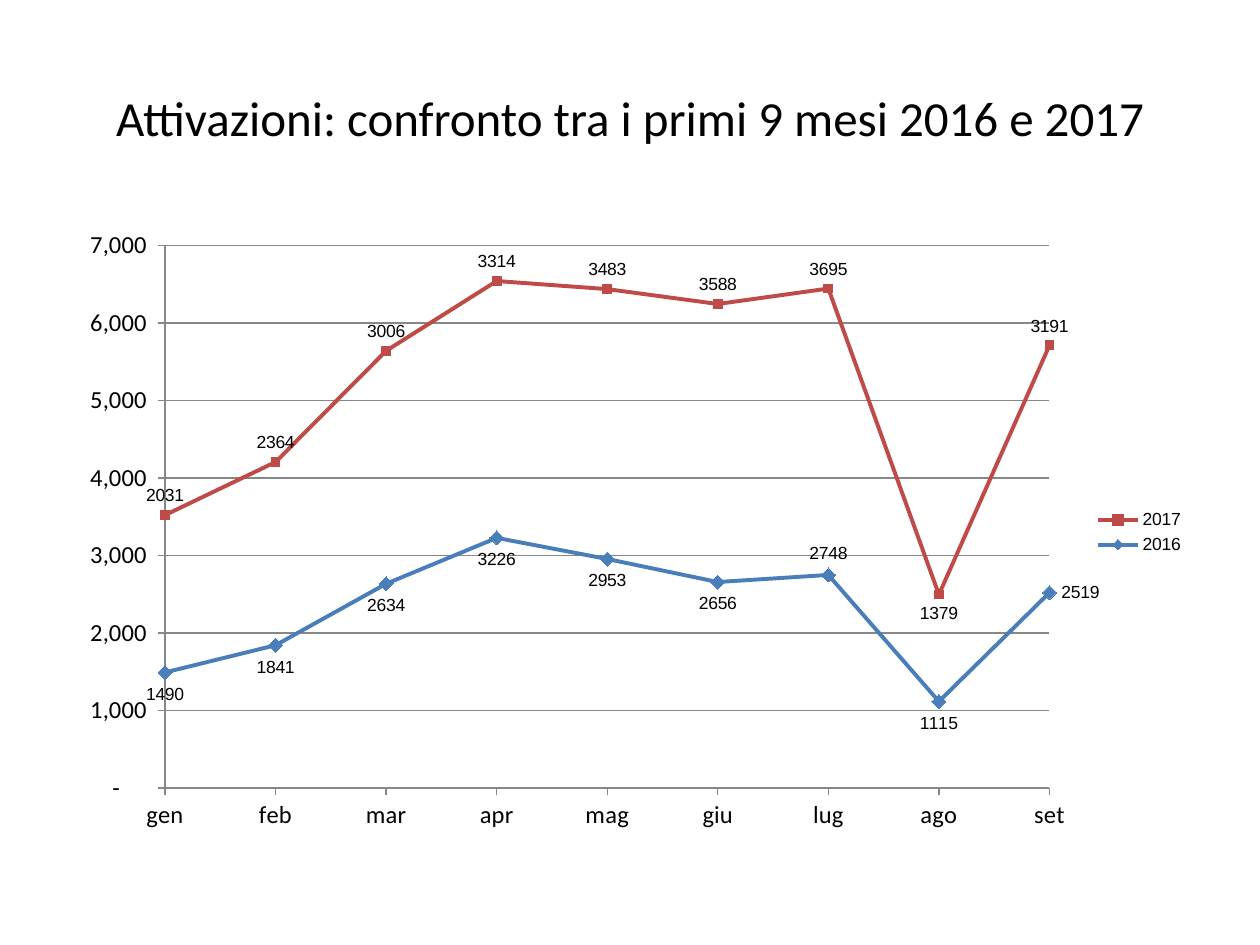
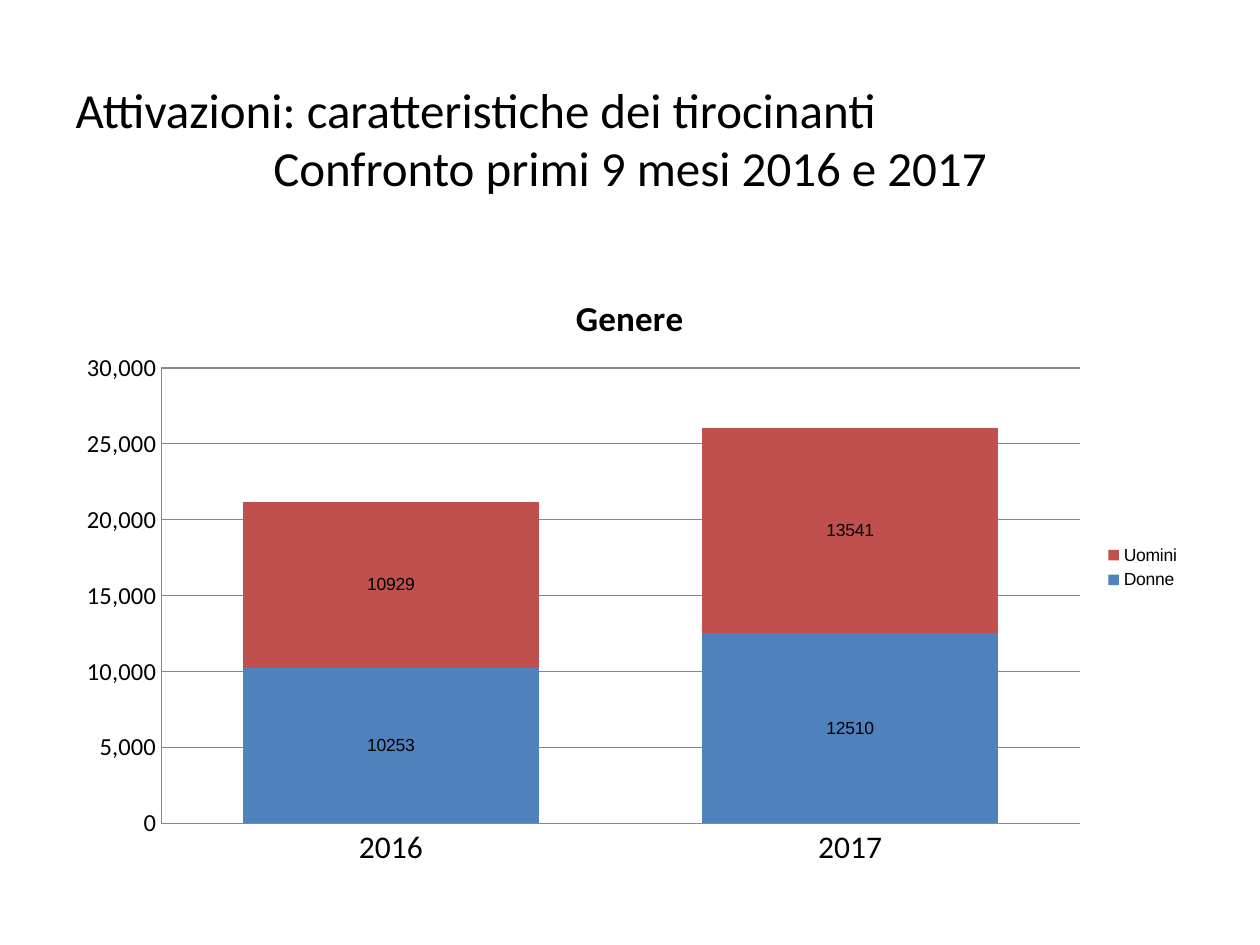
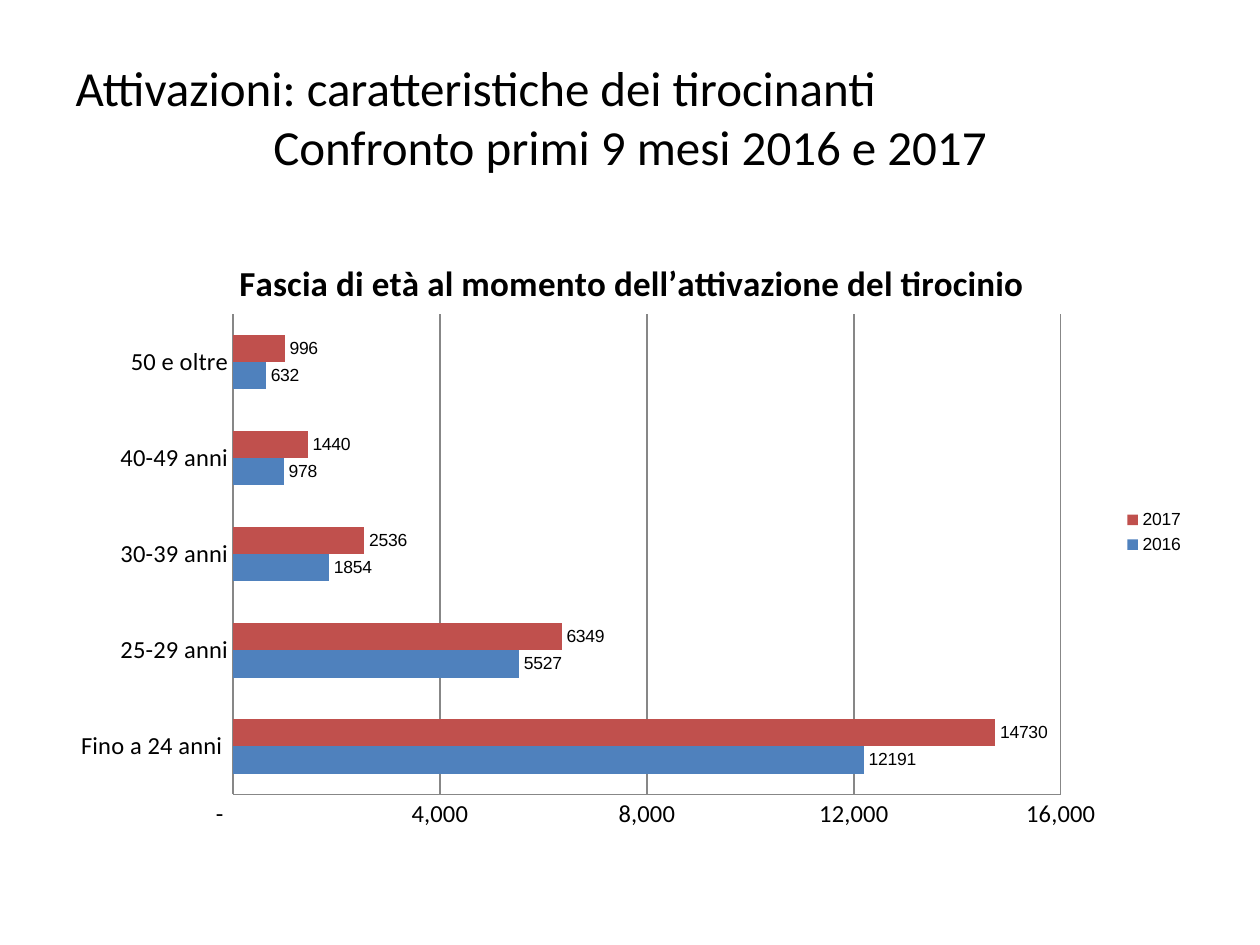
from dataclasses import dataclass

from lxml import etree
from pptx import Presentation
from pptx.chart.data import CategoryChartData
from pptx.dml.color import RGBColor
from pptx.enum.chart import (XL_CHART_TYPE, XL_LABEL_POSITION, XL_LEGEND_POSITION,
                             XL_MARKER_STYLE, XL_TICK_MARK)
from pptx.enum.text import MSO_ANCHOR, MSO_AUTO_SIZE, PP_ALIGN
from pptx.oxml.ns import qn
from pptx.util import Inches, Pt

LINE = XL_CHART_TYPE.LINE_MARKERS_STACKED
STACK = XL_CHART_TYPE.COLUMN_STACKED
BAR = XL_CHART_TYPE.BAR_CLUSTERED
ABOVE, BELOW = XL_LABEL_POSITION.ABOVE, XL_LABEL_POSITION.BELOW
RIGHT, MID = XL_LABEL_POSITION.RIGHT, XL_LABEL_POSITION.CENTER
OUTER = XL_LABEL_POSITION.OUTSIDE_END
SIDE = XL_LEGEND_POSITION.RIGHT
DIAMOND, SQUARE = XL_MARKER_STYLE.DIAMOND, XL_MARKER_STYLE.SQUARE
NO_TICK, OUT_TICK = XL_TICK_MARK.NONE, XL_TICK_MARK.OUTSIDE
LEFT, CENTER = PP_ALIGN.LEFT, PP_ALIGN.CENTER
MIDDLE, FIXED = MSO_ANCHOR.MIDDLE, MSO_AUTO_SIZE.NONE

WIDE, HIGH = Inches(10), Inches(7.5)
COLS, ROWS = 20, 30
DASH = r"_-* #,##0_-;\-* #,##0_-;_-* \-??_-;_-@_-"
PLAIN = "#,##0"


@dataclass(frozen=True)
class Theme:
    ink: str = "000000"
    rule: str = "878787"
    fills: tuple = ("4F81BD", "C0504D")
    lines: tuple = ("4A7EBB", "BE4B48")
    head: str = "Calibri"
    body: str = "Arial"
    title: int = 28
    name: int = 20
    large: int = 18
    axis: int = 14
    label: int = 10
    thin: float = 0.75
    thick: float = 2.25


THEME = Theme()


def color(code):
    return RGBColor.from_string(code)


def style(font, face, size, bold=False):
    font.name, font.size, font.bold = face, Pt(size), bold
    font.color.rgb = color(THEME.ink)


def stroke(line, code, width):
    line.color.rgb = color(code)
    line.width = Pt(width)


def grid(col, row, cols, rows):
    return (round(WIDE * col / COLS), round(HIGH * row / ROWS),
            round(WIDE * cols / COLS), round(HIGH * rows / ROWS))


def place(part, spot, marks):
    old = part.find(qn("c:layout"))
    if old is not None:
        part.remove(old)
    layout = etree.Element(qn("c:layout"))
    manual = etree.SubElement(layout, qn("c:manualLayout"))
    for tag, val in marks.items():
        etree.SubElement(manual, qn("c:" + tag)).set("val", str(val))
    part.insert(spot, layout)


def add_head(deck, rows, row):
    slide = deck.slides.add_slide(deck.slide_layouts[5])
    head = slide.shapes.title
    head.left, head.top, head.width, head.height = grid(1, row, 18, 5)
    frame = head.text_frame
    frame.text = "\n".join(rows)
    frame.vertical_anchor, frame.auto_size = MIDDLE, FIXED
    for par in frame.paragraphs:
        par.alignment = LEFT
        for run in par.runs:
            style(run.font, THEME.head, THEME.title)
    frame.paragraphs[-1].alignment = CENTER
    return slide


def set_axis(axis, size, tick):
    style(axis.tick_labels.font, THEME.head, size)
    stroke(axis.format.line, THEME.rule, THEME.thin)
    axis.major_tick_mark, axis.minor_tick_mark = tick, NO_TICK


def add_chart(slide, kind, box, cats, data, plot, top, step, mask,
              size=THEME.axis, tick=NO_TICK):
    source = CategoryChartData()
    source.categories = cats
    for name, vals in data.items():
        source.add_series(name, vals)
    chart = slide.shapes.add_chart(kind, *grid(*box), source).chart
    style(chart.font, THEME.body, THEME.label)
    chart.has_title = False
    chart.has_legend = True
    chart.legend.position = SIDE
    chart.legend.include_in_layout = False
    set_axis(chart.category_axis, size, tick)
    axis = chart.value_axis
    set_axis(axis, THEME.axis, tick)
    axis.minimum_scale, axis.maximum_scale, axis.major_unit = 0, top, step
    axis.has_major_gridlines = True
    stroke(axis.major_gridlines.format.line, THEME.rule, THEME.thin)
    axis.tick_labels.number_format = mask
    axis.tick_labels.number_format_is_linked = False
    left, upper, width, height = plot
    place(chart.plots[0]._element.getparent(), 0, {
        "layoutTarget": "inner", "xMode": "edge", "yMode": "edge",
        "x": left, "y": upper, "w": width, "h": height})
    chart.plots[0].vary_by_categories = False
    return chart


def add_name(chart, text, left, top):
    chart.has_title = True
    frame = chart.chart_title.text_frame
    frame.text = text
    style(frame.paragraphs[0].runs[0].font, THEME.head, THEME.name, True)
    place(chart.chart_title._element, 1,
          {"xMode": "edge", "yMode": "edge", "x": left, "y": top})


def add_labels(series, spot):
    labels = series.data_labels
    labels.show_value = True
    labels.position = spot
    style(labels.font, THEME.body, THEME.label)


def paint_bars(chart, gap, lap, spot):
    plot = chart.plots[0]
    plot.gap_width, plot.overlap = gap, lap
    for series, code in zip(plot.series, THEME.fills):
        series.format.fill.solid()
        series.format.fill.fore_color.rgb = color(code)
        series.invert_if_negative = False
        add_labels(series, spot)


def paint_lines(chart):
    looks = ((DIAMOND, 8, BELOW, {6: ABOVE, 8: RIGHT}),
             (SQUARE, 5, ABOVE, {7: BELOW}))
    for series, code, look in zip(chart.plots[0].series, THEME.lines, looks):
        shape, size, spot, moves = look
        series.smooth = False
        stroke(series.format.line, code, THEME.thick)
        mark = series.marker
        mark.style, mark.size = shape, size
        mark.format.fill.solid()
        mark.format.fill.fore_color.rgb = color(code)
        mark.format.line.color.rgb = color(code)
        add_labels(series, spot)
        for index, move in moves.items():
            series.points[index].data_label.position = move


def start_on_axis(chart):
    axis = chart.value_axis._element
    cross = axis.find(qn("c:crossBetween"))
    if cross is None:
        cross = etree.Element(qn("c:crossBetween"))
        axis.find(qn("c:crosses")).addnext(cross)
    cross.set("val", "midCat")


def month_slide(deck):
    slide = add_head(deck, ["Attivazioni: confronto tra i primi 9 mesi 2016 e 2017"], 1.2)
    data = {"2016": (1490, 1841, 2634, 3226, 2953, 2656, 2748, 1115, 2519),
            "2017": (2031, 2364, 3006, 3314, 3483, 3588, 3695, 1379, 3191)}
    months = ("gen", "feb", "mar", "apr", "mag", "giu", "lug", "ago", "set")
    chart = add_chart(slide, LINE, (1, 7, 18, 19.8), months, data,
                      (0.09, 0.04, 0.78, 0.87), 7000, 1000, DASH, tick=OUT_TICK)
    start_on_axis(chart)
    paint_lines(chart)


def gender_slide(deck, rows):
    slide = add_head(deck, rows, 1.88)
    data = {"Donne": (10253, 12510), "Uomini": (10929, 13541)}
    chart = add_chart(slide, STACK, (0.94, 8.12, 18, 19.8), ("2016", "2017"), data,
                      (0.09, 0.18, 0.81, 0.73), 30000, 5000, PLAIN, THEME.large)
    add_name(chart, "Genere", 0.45, 0.05)
    paint_bars(chart, 55, 100, MID)


def age_slide(deck, rows):
    slide = add_head(deck, rows, 1.2)
    data = {"2016": (12191, 5527, 1854, 978, 632),
            "2017": (14730, 6349, 2536, 1440, 996)}
    ages = ("Fino a 24 anni ", "25-29 anni", "30-39 anni", "40-49 anni", "50 e oltre")
    chart = add_chart(slide, BAR, (1, 7, 18, 19.8), ages, data,
                      (0.15, 0.15, 0.73, 0.77), 16000, 4000, DASH)
    add_name(chart, "Fascia di età al momento dell’attivazione del tirocinio", 0.15, 0.05)
    paint_bars(chart, 150, 0, OUTER)


def main():
    deck = Presentation()
    deck.slide_width, deck.slide_height = WIDE, HIGH
    rows = ["Attivazioni: caratteristiche dei tirocinanti",
            "Confronto primi 9 mesi 2016 e 2017"]
    month_slide(deck)
    gender_slide(deck, rows)
    age_slide(deck, rows)
    deck.save("out.pptx")


if __name__ == "__main__":
    main()
